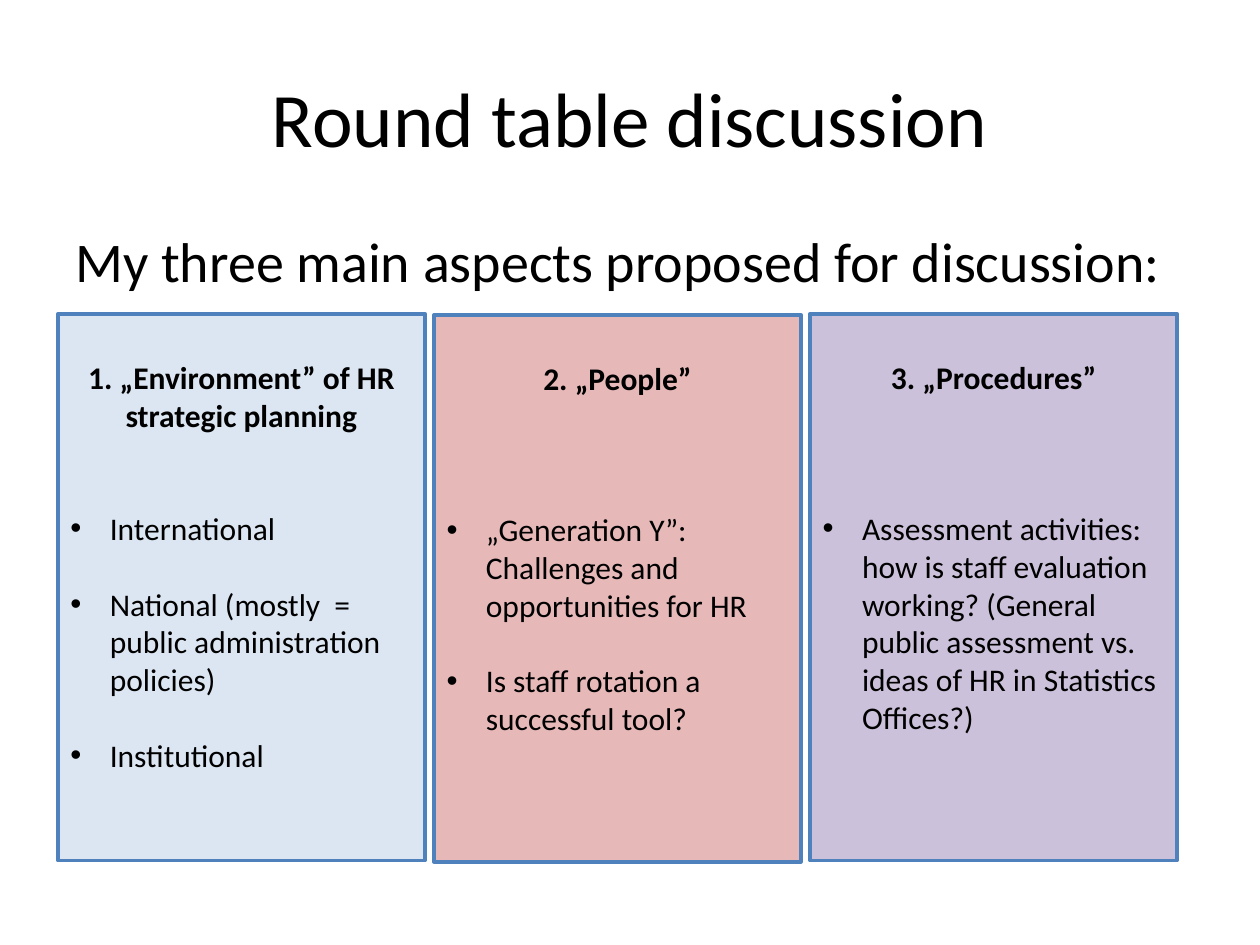
from lxml import etree
from pptx import Presentation
from pptx.dml.color import RGBColor
from pptx.enum.shapes import MSO_SHAPE
from pptx.enum.text import MSO_ANCHOR, PP_ALIGN
from pptx.oxml.ns import qn
from pptx.util import Pt

RECT = MSO_SHAPE.RECTANGLE
TOP, MIDDLE = MSO_ANCHOR.TOP, MSO_ANCHOR.MIDDLE
LEFT, CENTER = PP_ALIGN.LEFT, PP_ALIGN.CENTER

THEME = {
    "font": "Calibri",
    "text": RGBColor.from_string("000000"),
    "line": RGBColor.from_string("4F81BD"),
    "title": Pt(44),
    "lead": Pt(32),
    "body": Pt(18),
}
ROW = 21.6


def style(para, size, align, bold=False):
    para.alignment = align
    para.font.name = THEME["font"]
    para.font.size = THEME[size]
    para.font.bold = bold
    para.font.color.rgb = THEME["text"]


def bullet(para):
    props = para._p.get_or_add_pPr()
    props.set("marL", str(Pt(22.5)))
    props.set("indent", str(Pt(-22.5)))
    font = etree.SubElement(props, qn("a:buFont"))
    font.set("typeface", "Arial")
    etree.SubElement(props, qn("a:buChar")).set("char", "•")


deck = Presentation()
deck.slide_width, deck.slide_height = Pt(720), Pt(540)
slide = deck.slides.add_slide(deck.slide_layouts[6])

heads = [
    ("Round table discussion", 21.6, 90, "title", CENTER, MIDDLE),
    ("My three main aspects proposed for discussion:", 126, 42, "lead", LEFT, TOP),
]
for text, top, high, size, align, anchor in heads:
    frame = slide.shapes.add_textbox(Pt(36), Pt(top), Pt(648), Pt(high)).text_frame
    frame.word_wrap = True
    frame.vertical_anchor = anchor
    para = frame.paragraphs[0]
    para.text = text
    style(para, size, align)

topics = [
    ("1. „Environment” of HR strategic planning", "DCE6F2", 179.3, 2,
     ["International",
      "National (mostly  = public administration policies)",
      "Institutional"]),
    ("2. „People”", "E6B9B8", 180, 3,
     ["„Generation Y”: Challenges and opportunities for HR",
      "Is staff rotation a successful tool?"]),
    ("3. „Procedures”", "CCC1DA", 179.3, 3,
     ["Assessment activities: how is staff evaluation working? "
      "(General public assessment vs. ideas of HR in Statistics Offices?)"]),
]
for col, (head, fill, top, gap, points) in enumerate(topics):
    box = slide.shapes.add_shape(
        RECT, Pt(33.2 + col * 214.9), Pt(top), Pt(209.6), Pt(312.5))
    box.shadow.inherit = False
    box.fill.solid()
    box.fill.fore_color.rgb = RGBColor.from_string(fill)
    box.line.color.rgb = THEME["line"]
    box.line.width = Pt(2.25)
    frame = box.text_frame
    frame.word_wrap = True
    frame.vertical_anchor = TOP
    frame.margin_top = Pt(3.6 + ROW)
    para = frame.paragraphs[0]
    para.text = head
    style(para, "body", CENTER, True)
    for num, point in enumerate(points):
        para = frame.add_paragraph()
        para.text = point
        style(para, "body", LEFT)
        para.space_before = Pt(ROW if num else gap * ROW)
        bullet(para)

deck.save("out.pptx")
